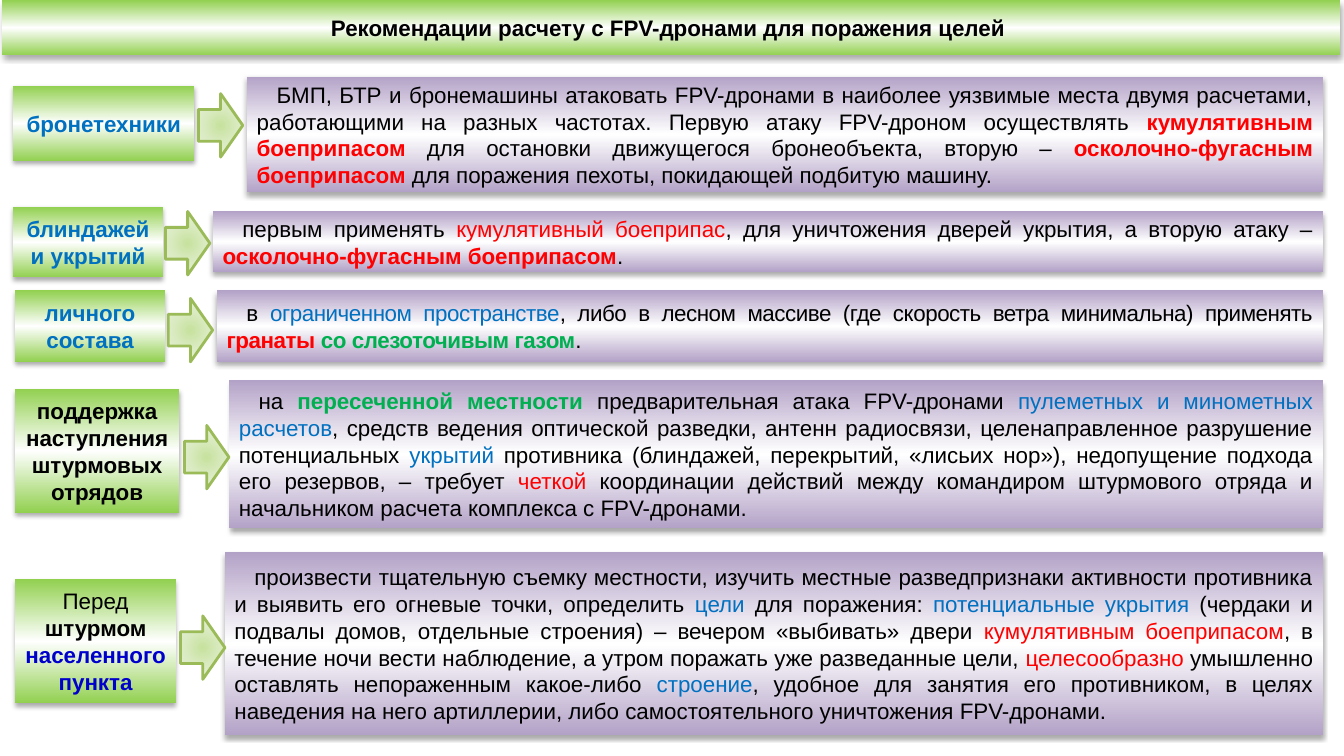
from dataclasses import dataclass

from lxml import etree
from pptx import Presentation
from pptx.dml.color import RGBColor
from pptx.enum.shapes import MSO_SHAPE
from pptx.enum.text import MSO_ANCHOR, PP_ALIGN
from pptx.oxml.ns import qn
from pptx.util import Cm, Pt

RECT, ARROW = MSO_SHAPE.RECTANGLE, MSO_SHAPE.RIGHT_ARROW
CENTER, JUSTIFY = PP_ALIGN.CENTER, PP_ALIGN.JUSTIFY
MIDDLE = MSO_ANCHOR.MIDDLE


@dataclass(frozen=True)
class Theme:
    font: str = "Arial"
    size: int = 16
    black: str = "000000"
    blue: str = "0070C0"
    navy: str = "0000CC"
    red: str = "FF0000"
    green: str = "00B050"
    arrow_line: str = "9BBB59"
    green_band: tuple = ("92D050", "FFFFFF", "92D050")
    violet_band: tuple = ("B3A2C7", "FFFFFF", "B3A2C7")
    arrow_glow: tuple = ("C7E29E", "DBEBC4", "EDF5E2")


THEME = Theme()
PLAIN, BOLD = (THEME.black, False), (THEME.black, True)
BLUE, BLUE_BOLD = (THEME.blue, False), (THEME.blue, True)
RED, RED_BOLD = (THEME.red, False), (THEME.red, True)
GREEN_BOLD, NAVY_BOLD = (THEME.green, True), (THEME.navy, True)

TEXT_RIGHT = 33.34
ARROW_W, ARROW_H = 1.12, 1.6

TITLE = "Рекомендации расчету с FPV-дронами для поражения целей "

# Label box, arrow corner, advice (left, top, height), letter spacing, texts
ROWS = [
    ((0.33, 2.16, 4.57, 1.9), (5, 2.36), (6.22, 1.93, 2.92), 0,
     [("бронетехники", BLUE_BOLD)],
     [("БМП, БТР и бронемашины атаковать FPV-дронами в наиболее уязвимые места "
       "двумя расчетами, работающими на разных частотах. Первую атаку "
       "FPV-дроном осуществлять ", PLAIN),
      ("кумулятивным боеприпасом", RED_BOLD),
      (" для остановки движущегося бронеобъекта, вторую – ", PLAIN),
      ("осколочно-фугасным боеприпасом ", RED_BOLD),
      ("для поражения пехоты, покидающей подбитую машину.", PLAIN)]),
    ((0.33, 5.21, 3.78, 1.78), (4.17, 5.33), (5.36, 5.33, 1.52), 0,
     [("блиндажей и укрытий", BLUE_BOLD)],
     [("первым применять ", PLAIN),
      ("кумулятивный боеприпас", RED),
      (", для уничтожения дверей укрытия, а вторую атаку – ", PLAIN),
      ("осколочно-фугасным боеприпасом", RED_BOLD),
      (".", PLAIN)]),
    ((0.38, 7.32, 3.78, 1.8), (4.24, 7.52), (5.46, 7.32, 1.8), -30,
     [("личного состава", BLUE_BOLD)],
     [("в", PLAIN),
      (" ограниченном пространстве", BLUE),
      (", либо в лесном массиве (где скорость ветра минимальна) применять ", PLAIN),
      ("гранаты", RED_BOLD),
      (" со слезоточивым газом", GREEN_BOLD),
      (".", PLAIN)]),
    ((0.38, 9.8, 4.14, 3.12), (4.65, 10.72), (5.77, 9.58, 3.73), 0,
     [("поддержка наступления штурмовых отрядов", BOLD)],
     [("на", PLAIN),
      (" пересеченной местности ", GREEN_BOLD),
      ("предварительная атака FPV-дронами ", PLAIN),
      ("пулеметных и минометных расчетов", BLUE),
      (", средств ведения оптической разведки, антенн радиосвязи, "
       "целенаправленное разрушение потенциальных ", PLAIN),
      ("укрытий", BLUE),
      (" противника (блиндажей, перекрытий, «лисьих нор»), недопущение подхода "
       "его резервов, – требует ", PLAIN),
      ("четкой", RED),
      (" координации действий между командиром штурмового отряда и начальником "
       "расчета комплекса с FPV-дронами.", PLAIN)]),
    ((0.38, 14.6, 4.06, 3.12), (4.55, 15.52), (5.66, 13.92, 4.6), 0,
     [("Перед ", PLAIN), ("штурмом ", BOLD), ("населенного пункта", NAVY_BOLD)],
     [("произвести тщательную съемку местности, изучить местные разведпризнаки "
       "активности противника и выявить его огневые точки, определить ", PLAIN),
      ("цели", BLUE),
      (" для поражения: ", PLAIN),
      ("потенциальные укрытия ", BLUE),
      ("(чердаки и подвалы домов, отдельные строения) – вечером «выбивать» "
       "двери ", PLAIN),
      ("кумулятивным боеприпасом", RED),
      (", в течение ночи вести наблюдение, а утром поражать уже разведанные "
       "цели, ", PLAIN),
      ("целесообразно", RED),
      (" умышленно оставлять непораженным какое-либо ", PLAIN),
      ("строение", BLUE),
      (", удобное для занятия его противником, в целях наведения на него "
       "артиллерии, либо самостоятельного уничтожения FPV-дронами.", PLAIN)]),
]


def add_xml(parent, tag, **attrs):
    return etree.SubElement(parent, qn(tag), {k: str(v) for k, v in attrs.items()})


class SlideBuilder:
    def __init__(self, slide, theme):
        self.slide, self.theme = slide, theme

    def shape(self, kind, box, colors, radial=False):
        """Add a shape with an even three-stop gradient, without line or shadow."""
        s = self.slide.shapes.add_shape(kind, *map(Cm, box))
        s.shadow.inherit = False
        s.line.fill.background()
        s.fill.gradient()
        grad = s._element.spPr.find(qn("a:gradFill"))
        for child in list(grad):
            grad.remove(child)
        stops = add_xml(grad, "a:gsLst")
        for i, color in enumerate(colors):
            stop = add_xml(stops, "a:gs", pos=i * 50000)
            add_xml(stop, "a:srgbClr", val=color)
        if radial:
            path = add_xml(grad, "a:path", path="circle")
            add_xml(path, "a:fillToRect", l=50000, t=50000, r=50000, b=50000)
        else:
            add_xml(grad, "a:lin", ang=5400000, scaled=0)
        return s

    def drop_shadow(self, s):
        effects = s._element.spPr.find(qn("a:effectLst"))
        shadow = add_xml(effects, "a:outerShdw", blurRad=Pt(3.5), dist=Pt(2.2),
                         dir=5400000, rotWithShape=0)
        color = add_xml(shadow, "a:srgbClr", val=self.theme.black)
        add_xml(color, "a:alpha", val=32000)

    def panel(self, box, colors, runs, align=CENTER, indent=0, spacing=0):
        """Add a shadowed box; runs are (text, (colour, bold)) pairs."""
        s = self.shape(RECT, box, colors)
        self.drop_shadow(s)
        tf = s.text_frame
        tf.word_wrap = True
        tf.vertical_anchor = MIDDLE
        p = tf.paragraphs[0]
        p.alignment = align
        if indent:
            p._p.get_or_add_pPr().set("indent", str(Cm(indent)))
        for text, (color, bold) in runs:
            r = p.add_run()
            r.text = text
            r.font.name = self.theme.font
            r.font.size = Pt(self.theme.size)
            r.font.bold = bold
            r.font.color.rgb = RGBColor.from_string(color)
            if spacing:
                r._r.get_or_add_rPr().set("spc", str(spacing))
        return s

    def label(self, box, runs):
        s = self.panel(box, self.theme.green_band, runs)
        s.text_frame.margin_left = s.text_frame.margin_right = Cm(0.2)

    def advice(self, left, top, height, runs, spacing):
        box = (left, top, TEXT_RIGHT - left, height)
        self.panel(box, self.theme.violet_band, runs, JUSTIFY, 0.5, spacing)

    def arrow(self, left, top):
        s = self.shape(ARROW, (left, top, ARROW_W, ARROW_H),
                       self.theme.arrow_glow, radial=True)
        s.line.color.rgb = RGBColor.from_string(self.theme.arrow_line)
        s.line.width = Pt(2)


def main():
    prs = Presentation()
    prs.slide_width, prs.slide_height = Cm(33.87), Cm(19.05)
    builder = SlideBuilder(prs.slides.add_slide(prs.slide_layouts[6]), THEME)
    builder.panel((0.05, 0, 33.73, 1.4), THEME.green_band, [(TITLE, BOLD)])
    for label_box, arrow_at, advice_at, spacing, label, advice in ROWS:
        builder.advice(*advice_at, advice, spacing)
        builder.label(label_box, label)
        builder.arrow(*arrow_at)
    prs.save("out.pptx")


if __name__ == "__main__":
    main()
